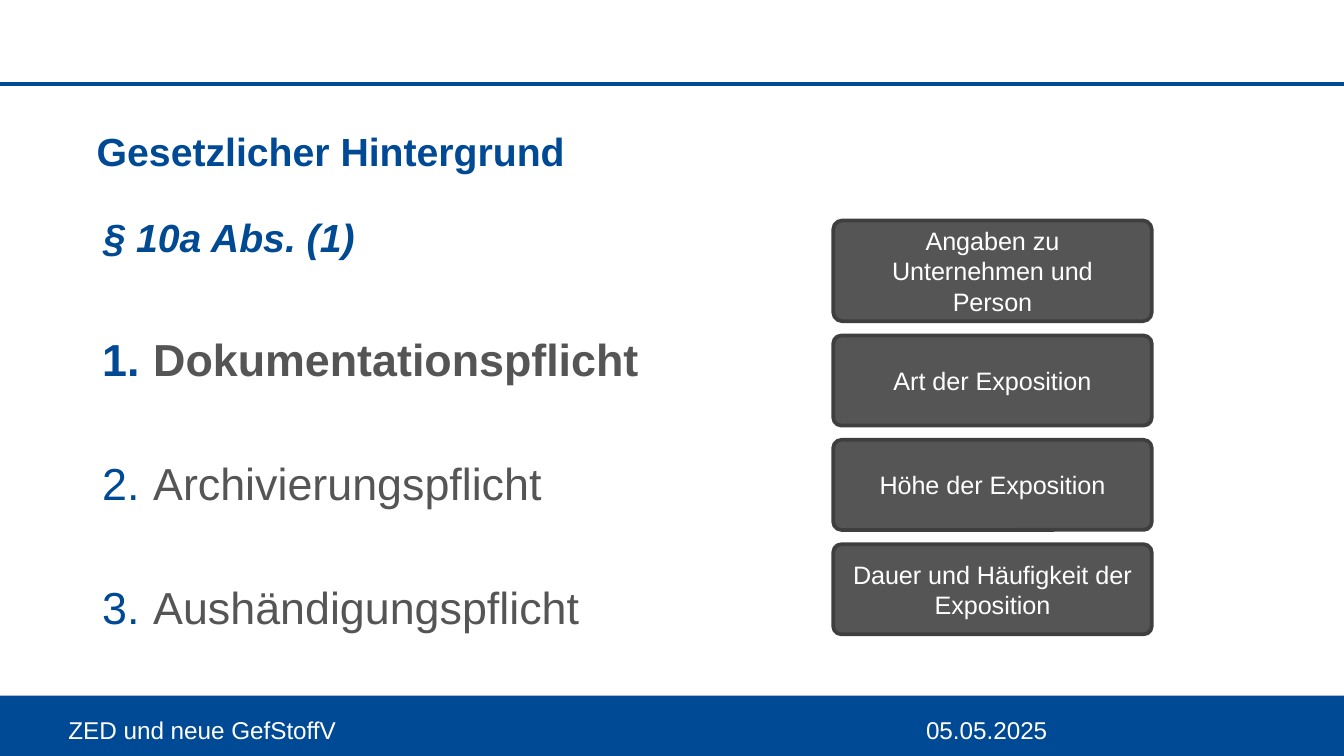
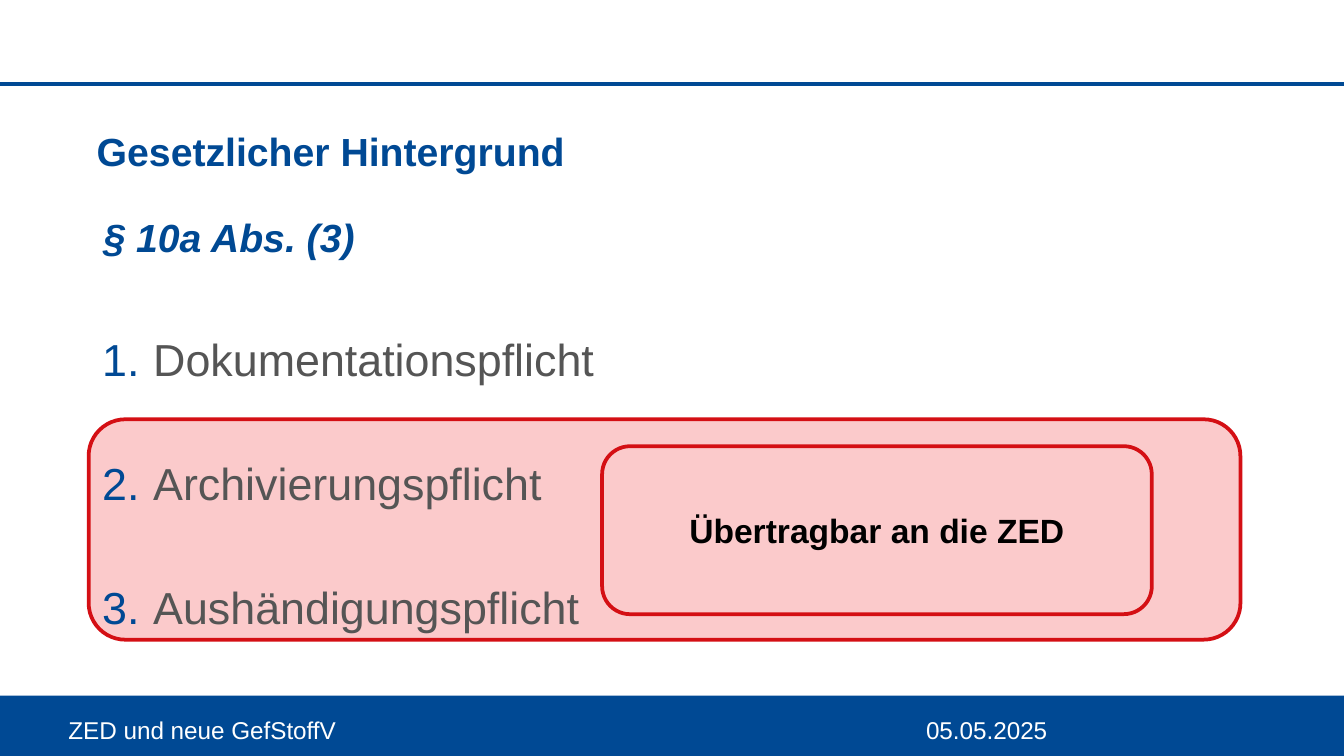
from dataclasses import dataclass

from lxml import etree
from pptx import Presentation
from pptx.dml.color import RGBColor
from pptx.enum.shapes import MSO_CONNECTOR, MSO_SHAPE
from pptx.enum.text import MSO_ANCHOR, PP_ALIGN
from pptx.oxml.ns import qn
from pptx.util import Inches, Pt

RECTANGLE, ROUNDED = MSO_SHAPE.RECTANGLE, MSO_SHAPE.ROUNDED_RECTANGLE
STRAIGHT = MSO_CONNECTOR.STRAIGHT
TOP, MIDDLE = MSO_ANCHOR.TOP, MSO_ANCHOR.MIDDLE
CENTER = PP_ALIGN.CENTER

# Content
TITLE = "Gesetzlicher Hintergrund"
FOOTER = "ZED und neue GefStoffV"
DATE = "05.05.2025"
DUTIES = ["Dokumentationspflicht", "Archivierungspflicht", "Aushändigungspflicht"]
DOCUMENTATION = {"section": "§ 10a Abs. (1)", "bold_duty": "Dokumentationspflicht"}
TRANSFER = {"section": "§ 10a Abs. (3)", "bold_duty": None}
# Card text and height
CARDS = [
    ("Angaben zu Unternehmen und Person", 0.75),
    ("Art der Exposition", 0.67),
    ("Höhe der Exposition", 0.67),
    ("Dauer und Häufigkeit der Exposition", 0.67),
]
TRANSFER_NOTE = "Übertragbar an die ZED"


@dataclass(frozen=True)
class Theme:
    font: str = "Arial"
    blue: str = "004994"
    section_blue: str = "004993"
    gray: str = "555555"
    dark_gray: str = "3F3F3F"
    pink: str = "FBCACB"
    red: str = "D40F14"
    white: str = "FFFFFF"
    black: str = "000000"
    title_size: float = 21
    duty_size: float = 24
    note_size: float = 18
    card_size: float = 13.5
    footer_size: float = 13
    line_width: float = 2
    paragraph_gap: float = 4.5


THEME = Theme()
WIDTH = 10
HEIGHT = WIDTH * 9 / 16
BAND_HEIGHT = 0.45
RULE_TOP = HEIGHT / 9
CARD_LEFT, CARD_WIDTH = 6.2, 2.37
CARD_TOP, CARD_BOTTOM = 1.64, 4.72


def color(value):
    return RGBColor.from_string(value)


def style(paragraph, size, text_color, bold=False, italic=False):
    for run in paragraph.runs:
        font = run.font
        font.name, font.size = THEME.font, Pt(size)
        font.bold, font.italic = bold, italic
        font.color.rgb = color(text_color)


def add_text_box(slide, box, anchor):
    text_frame = slide.shapes.add_textbox(*map(Inches, box)).text_frame
    text_frame.word_wrap = True
    text_frame.vertical_anchor = anchor
    text_frame.margin_left = text_frame.margin_right = 0
    text_frame.margin_top = text_frame.margin_bottom = 0
    return text_frame


def add_label(slide, box, text, size, text_color, bold=False, anchor=MIDDLE):
    text_frame = add_text_box(slide, box, anchor)
    text_frame.text = text
    style(text_frame.paragraphs[0], size, text_color, bold)


def add_box(slide, kind, box, fill=None, line=None):
    shape = slide.shapes.add_shape(kind, *map(Inches, box))
    shape.shadow.inherit = False
    if fill:
        shape.fill.solid()
        shape.fill.fore_color.rgb = color(fill)
    else:
        shape.fill.background()
    if line:
        shape.line.color.rgb = color(line)
        shape.line.width = Pt(THEME.line_width)
    else:
        shape.line.fill.background()
    return shape


def set_box_text(shape, text, size, text_color, bold=False):
    text_frame = shape.text_frame
    text_frame.word_wrap = True
    text_frame.vertical_anchor = MIDDLE
    text_frame.text = text
    paragraph = text_frame.paragraphs[0]
    paragraph.alignment = CENTER
    style(paragraph, size, text_color, bold)


def indent(paragraph, left, first_line=0):
    properties = paragraph._p.get_or_add_pPr()
    properties.set("marL", str(Inches(left)))
    properties.set("indent", str(Inches(first_line)))
    return properties


def number(paragraph):
    properties = indent(paragraph, 0.63, -0.38)
    bullet_color = etree.SubElement(properties, qn("a:buClr"))
    etree.SubElement(bullet_color, qn("a:srgbClr"), val=THEME.blue)
    etree.SubElement(properties, qn("a:buFont"), typeface=THEME.font)
    etree.SubElement(properties, qn("a:buAutoNum"), type="arabicPeriod")


# Band, rule, title and footer of every slide
def add_base_slide(presentation):
    slide = presentation.slides.add_slide(presentation.slide_layouts[6])
    add_box(slide, RECTANGLE, (0, HEIGHT - BAND_HEIGHT, WIDTH, BAND_HEIGHT), THEME.blue)
    rule = slide.shapes.add_connector(
        STRAIGHT, 0, Inches(RULE_TOP), Inches(WIDTH), Inches(RULE_TOP))
    rule.line.color.rgb = color(THEME.blue)
    rule.line.width = Pt(THEME.line_width)
    etree.SubElement(rule._element.spPr, qn("a:effectLst"))
    add_label(slide, (0.72, 0.95, 8.57, 0.43), TITLE, THEME.title_size, THEME.blue,
              True, TOP)
    add_label(slide, (0.51, 5.28, 6.14, 0.3), FOOTER, THEME.footer_size, THEME.white)
    add_label(slide, (6.89, 5.28, 1.42, 0.3), DATE, THEME.footer_size, THEME.white)
    return slide


# Section reference and the numbered duties
def add_duties(slide, section, bold_duty):
    text_frame = add_text_box(slide, (0.51, 1.24, 8.99, 3.94), TOP)
    text_frame.text = "\n".join([section] + DUTIES)
    heading, *duties = text_frame.paragraphs
    for paragraph in text_frame.paragraphs:
        paragraph.line_spacing = 2.0
        paragraph.space_after = Pt(THEME.paragraph_gap)
    indent(heading, 0.26)
    style(heading, THEME.title_size, THEME.section_blue, True, True)
    for paragraph in duties:
        paragraph.space_before = Pt(THEME.paragraph_gap)
        number(paragraph)
        style(paragraph, THEME.duty_size, THEME.gray, paragraph.text == bold_duty)


def build_documentation_slide(presentation):
    slide = add_base_slide(presentation)
    add_duties(slide, **DOCUMENTATION)
    # Stack of cards with equal gaps
    free_height = CARD_BOTTOM - CARD_TOP - sum(height for _, height in CARDS)
    gap = free_height / (len(CARDS) - 1)
    top = CARD_TOP
    for text, height in CARDS:
        card = add_box(slide, ROUNDED, (CARD_LEFT, top, CARD_WIDTH, height),
                       THEME.gray, THEME.dark_gray)
        card.adjustments[0] = 0.09
        set_box_text(card, text, THEME.card_size, THEME.white)
        top += height + gap


def build_transfer_slide(presentation):
    slide = add_base_slide(presentation)
    # Highlight behind the transferable duties
    add_box(slide, ROUNDED, (0.66, 3.12, 8.57, 1.64), THEME.pink, THEME.red)
    note = add_box(slide, ROUNDED, (4.48, 3.32, 4.09, 1.25), line=THEME.red)
    set_box_text(note, TRANSFER_NOTE, THEME.note_size, THEME.black, True)
    add_duties(slide, **TRANSFER)


def main():
    presentation = Presentation()
    presentation.slide_width = Inches(WIDTH)
    presentation.slide_height = Inches(HEIGHT)
    build_documentation_slide(presentation)
    build_transfer_slide(presentation)
    presentation.save("out.pptx")


if __name__ == "__main__":
    main()
